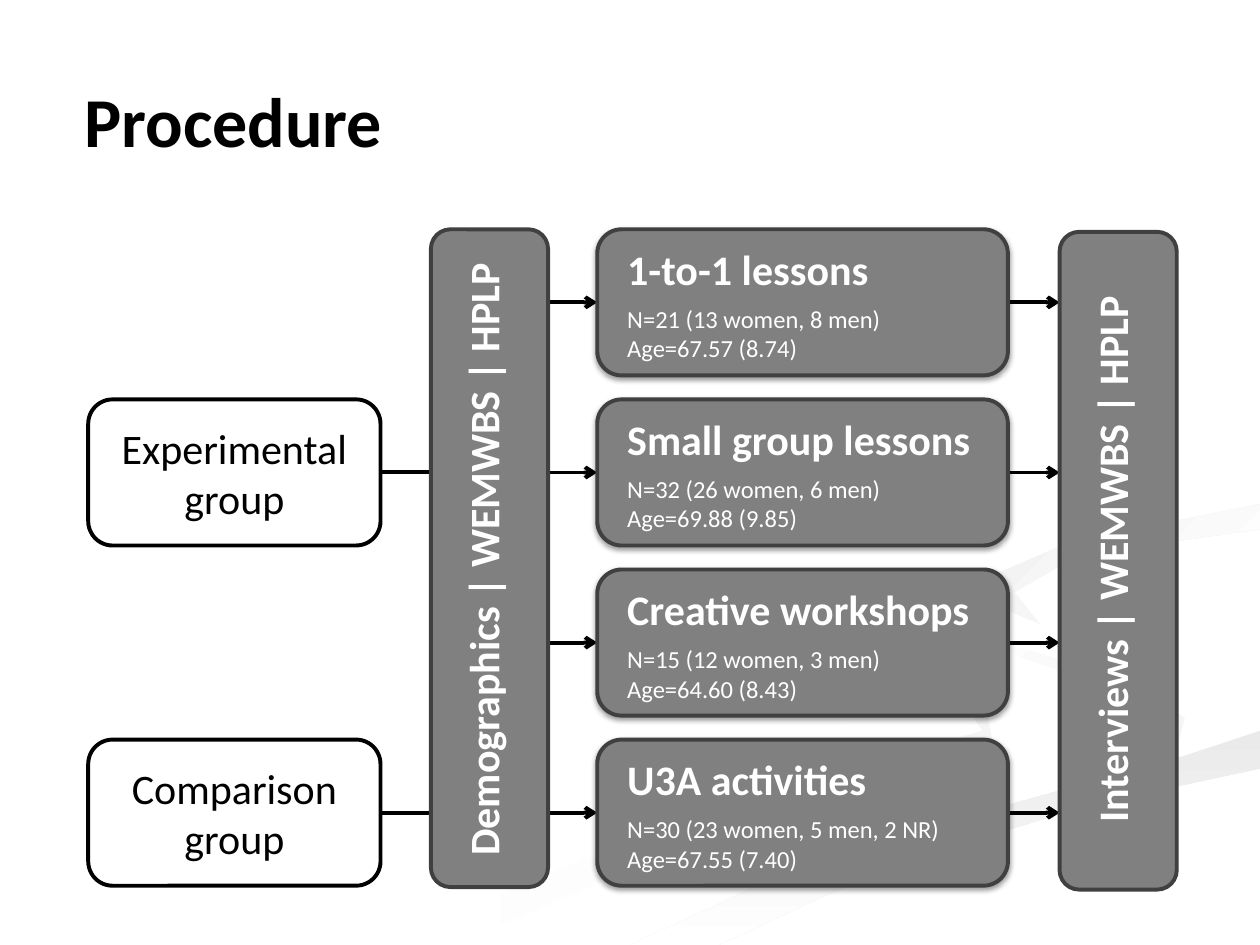
from dataclasses import dataclass
from typing import Optional

from lxml.etree import SubElement
from pptx import Presentation
from pptx.dml.color import RGBColor
from pptx.enum.shapes import MSO_CONNECTOR, MSO_SHAPE
from pptx.enum.text import MSO_ANCHOR, PP_ALIGN
from pptx.oxml.ns import qn
from pptx.util import Inches, Pt

BLACK = RGBColor(0x00, 0x00, 0x00)
WHITE = RGBColor(0xFF, 0xFF, 0xFF)
GREY = RGBColor(0x80, 0x80, 0x80)
DARK_GREY = RGBColor(0x40, 0x40, 0x40)
MIST = RGBColor(0xF5, 0xF5, 0xF5)
SILVER = RGBColor(0xEA, 0xEA, 0xEA)
PEARL = RGBColor(0xF1, 0xF1, 0xF1)

# Grid: four rows, and one column each for groups, pre-test, activities, post-test
FIRST_ROW, ROW_PITCH, ROW_HEIGHT = 1.82, 1.35, 1.16
GROUP_X, GROUP_W = 0.7, 2.32
BEFORE_X, AFTER_X, BAR_W, BAR_H = 3.42, 8.41, 0.93, 5.22
CARD_X, CARD_W = 4.74, 3.26
FONT = "Calibri"


@dataclass
class Ribbon:
    points: list[tuple[float, float]]
    start: RGBColor
    end: RGBColor
    angle: int = 0


@dataclass
class Group:
    lines: list[str]
    row: int
    feeds: list[int]


@dataclass
class Activity:
    name: str
    sample: str
    age: str


@dataclass
class Bar:
    label: str
    x: float
    y: float


RIBBONS = [
    Ribbon([(7.8, 5.5), (6.3, 5), (5.75, 4.6), (5.9, 4.9), (7.6, 5.5), (7.8, 5.8),
            (5.4, 6.5), (3, 7.5), (3.6, 7.5), (5, 6.9), (7.9, 6)], WHITE, MIST),
    Ribbon([(9.4, 5.7), (9, 5.4), (7.6, 5), (7.25, 4.65), (7.5, 5), (8.9, 5.5),
            (9.2, 5.8), (8.95, 6.05), (9.35, 5.9)], WHITE, MIST, 45),
    Ribbon([(5, 7.5), (5.7, 7.5), (7, 6.9), (8.6, 6.4), (10, 6.1), (10, 5.8),
            (9.4, 6), (7.6, 6.5), (6.3, 6.9)], SILVER, WHITE, 90),
    Ribbon([(7.8, 4.6), (7.9, 4.8), (8.25, 4.95), (8.05, 4.7), (8.4, 4.5),
            (9.3, 4.3), (10, 4.2), (10, 4), (8.5, 4.3)], PEARL, WHITE, 45),
]
GROUPS = [
    Group(["Experimental", "group"], 1, [0, 1, 2]),
    Group(["Comparison", "group"], 3, [3]),
]
ACTIVITIES = [
    Activity("1-to-1 lessons", "N=21 (13 women, 8 men)", "Age=67.57 (8.74)"),
    Activity("Small group lessons", "N=32 (26 women, 6 men)", "Age=69.88 (9.85)"),
    Activity("Creative workshops", "N=15 (12 women, 3 men)", "Age=64.60 (8.43)"),
    Activity("U3A activities", "N=30 (23 women, 5 men, 2 NR)", "Age=67.55 (7.40)"),
]
BARS = [
    Bar("Demographics | WEMWBS | HPLP", BEFORE_X, 1.82),
    Bar("Interviews | WEMWBS | HPLP", AFTER_X, 1.84),
]


def row_top(row: int) -> float:
    return FIRST_ROW + row * ROW_PITCH


def row_middle(row: int) -> float:
    return row_top(row) + ROW_HEIGHT / 2


def draw_ribbon(slide, ribbon: Ribbon) -> None:
    first, *rest = [(Inches(x), Inches(y)) for x, y in ribbon.points]
    builder = slide.shapes.build_freeform(*first)
    builder.add_line_segments(rest, close=True)
    band = builder.convert_to_shape()
    band.shadow.inherit = False
    band.line.fill.background()
    band.fill.gradient()
    band.fill.gradient_angle = -ribbon.angle % 360
    for stop, color in zip(band.fill.gradient_stops, (ribbon.start, ribbon.end)):
        stop.color.rgb = color


def draw_arrow(slide, x1: float, y1: float, x2: float, y2: float) -> None:
    kind = MSO_CONNECTOR.STRAIGHT if y1 == y2 else MSO_CONNECTOR.ELBOW
    arrow = slide.shapes.add_connector(kind, Inches(x1), Inches(y1), Inches(x2), Inches(y2))
    arrow.line.color.rgb = BLACK
    arrow.line.width = Pt(2.25)
    SubElement(arrow.line._get_or_add_ln(), qn("a:tailEnd"), type="arrow")
    SubElement(arrow._element.spPr, qn("a:effectLst"))


def draw_box(slide, x: float, y: float, w: float, h: float,
             fill: RGBColor, outline: RGBColor, shadow: bool = False) -> None:
    box = slide.shapes.add_shape(MSO_SHAPE.ROUNDED_RECTANGLE,
                                 Inches(x), Inches(y), Inches(w), Inches(h))
    box.shadow.inherit = False
    box.fill.solid()
    box.fill.fore_color.rgb = fill
    box.line.color.rgb = outline
    box.line.width = Pt(2.25)
    if shadow:
        effects = box._element.spPr.find(qn("a:effectLst"))
        cast = SubElement(effects, qn("a:outerShdw"), blurRad=str(Pt(3.1)),
                          dist=str(Pt(1.6)), dir="5400000", rotWithShape="0")
        black = SubElement(cast, qn("a:srgbClr"), val="000000")
        SubElement(black, qn("a:alpha"), val="38000")


def draw_text(slide, x: float, y: float, w: float, h: float, lines: list[str],
              color: RGBColor, size: int = 24, bold: bool = False,
              align: Optional[PP_ALIGN] = None):
    frame = slide.shapes.add_textbox(Inches(x), Inches(y), Inches(w), Inches(h)).text_frame
    frame.word_wrap = True
    frame.text = "\n".join(lines)
    for paragraph in frame.paragraphs:
        paragraph.alignment = align
        font = paragraph.font
        font.name, font.size, font.bold = FONT, Pt(size), bold
        font.color.rgb = color
    return frame


def draw_group(slide, group: Group) -> None:
    top = row_top(group.row)
    draw_box(slide, GROUP_X, top, GROUP_W, ROW_HEIGHT, WHITE, BLACK)
    draw_text(slide, GROUP_X, top + 0.13, GROUP_W, 0.91, group.lines, BLACK,
              align=PP_ALIGN.CENTER)


def draw_activity(slide, activity: Activity, row: int) -> None:
    top = row_top(row)
    draw_box(slide, CARD_X, top, CARD_W, ROW_HEIGHT, GREY, DARK_GREY, shadow=True)
    frame = draw_text(slide, CARD_X + 0.14, top + 0.06, 3, 1.06,
                      [activity.name, activity.sample, activity.age], WHITE, size=14)
    heading = frame.paragraphs[0]
    heading.font.size, heading.font.bold = Pt(24), True
    heading.space_after = Pt(6)


def draw_bar(slide, bar: Bar) -> None:
    draw_box(slide, bar.x, bar.y, BAR_W, BAR_H, GREY, DARK_GREY)
    frame = draw_text(slide, bar.x + 0.16, 1.84, 0.61, 5.2, [bar.label], WHITE,
                      bold=True, align=PP_ALIGN.CENTER)
    frame._txBody.bodyPr.set("vert", "vert270")


def main() -> None:
    deck = Presentation()
    deck.slide_width, deck.slide_height = Inches(10), Inches(7.5)
    slide = deck.slides.add_slide(deck.slide_layouts[6])

    # Background swirl
    for ribbon in RIBBONS:
        draw_ribbon(slide, ribbon)

    # Title
    title = draw_text(slide, 0.67, 0.28, 7.43, 1, ["Procedure"], BLACK, size=40, bold=True)
    title.vertical_anchor = MSO_ANCHOR.BOTTOM
    title.margin_left = title.margin_right = title.margin_top = title.margin_bottom = 0

    # Arrows from groups to activities and on to the post-test
    for group in GROUPS:
        for row in group.feeds:
            draw_arrow(slide, GROUP_X + GROUP_W, row_middle(group.row), CARD_X, row_middle(row))
    for row in range(len(ACTIVITIES)):
        draw_arrow(slide, CARD_X + CARD_W, row_middle(row), AFTER_X, row_middle(row))

    # Groups, activities and test bars
    for group in GROUPS:
        draw_group(slide, group)
    for row, activity in enumerate(ACTIVITIES):
        draw_activity(slide, activity, row)
    for bar in BARS:
        draw_bar(slide, bar)

    deck.save("out.pptx")


if __name__ == "__main__":
    main()
